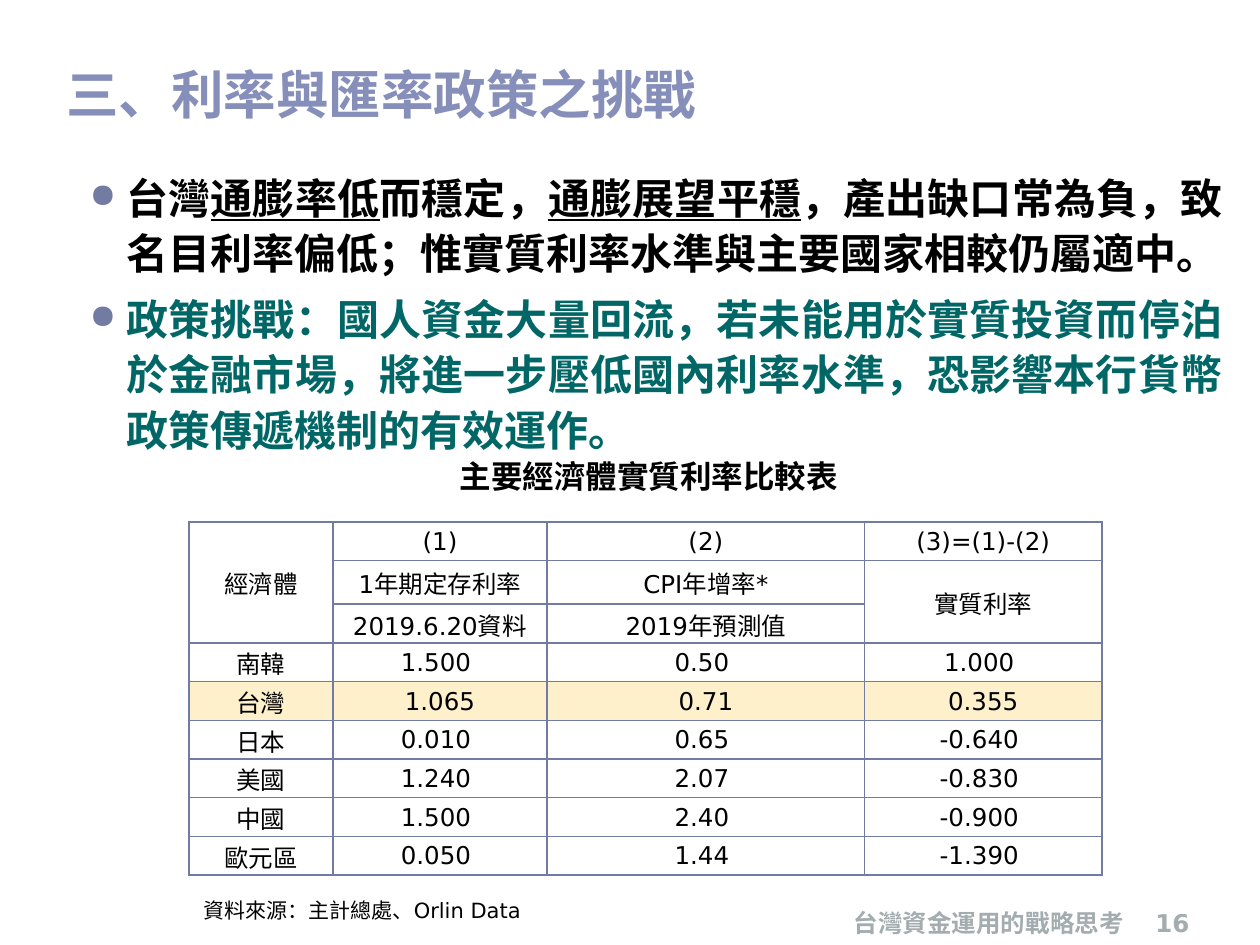
from dataclasses import dataclass

import lxml.etree
import pptx
import pptx.dml.color
import pptx.enum.text
import pptx.oxml
import pptx.oxml.ns
import pptx.util

Cm, Pt = pptx.util.Cm, pptx.util.Pt
RGB = pptx.dml.color.RGBColor
Align = pptx.enum.text.PP_ALIGN
Anchor = pptx.enum.text.MSO_ANCHOR
qn = pptx.oxml.ns.qn


@dataclass(frozen=True)
class Theme:
    face: str = "DejaVu Sans"
    title: str = "858FBA"
    ink: str = "000000"
    teal: str = "006666"
    rule: str = "727CA3"
    foot: str = "A3ACAF"
    glow: str = "FDF0CA"
    head_pt: int = 30
    body_pt: int = 24
    name_pt: int = 18
    cell_pt: int = 14
    note_pt: int = 12


THEME = Theme()


@dataclass(frozen=True)
class Label:
    """One line of text in a box measured in centimetres."""
    text: str
    box: tuple[float, float, float, float]
    size: int
    color: str
    bold: bool = True
    align: Align = Align.LEFT
    anchor: Anchor = Anchor.TOP


@dataclass(frozen=True)
class Point:
    """A bullet made of (text, underlined) spans."""
    spans: tuple[tuple[str, bool], ...]
    color: str


LABELS = (
    Label("三、利率與匯率政策之挑戰", (1.09, 1.12, 23.8, 2.92), THEME.head_pt, THEME.title),
    Label("台灣資金運用的戰略思考", (15.49, 18.01, 8.89, 1.02), THEME.cell_pt, THEME.foot,
          align=Align.CENTER, anchor=Anchor.BOTTOM),
    Label("16", (22.71, 18.01, 1.52, 1.02), THEME.cell_pt, THEME.foot,
          align=Align.RIGHT, anchor=Anchor.BOTTOM),
    Label("主要經濟體實質利率比較表", (3.86, 9.09, 18.44, 1.02), THEME.name_pt, THEME.ink,
          align=Align.CENTER),
    Label("資料來源：主計總處、Orlin Data", (3.86, 17.96, 7.39, 0.76), THEME.note_pt,
          THEME.ink, bold=False),
)

POINTS = (
    Point((("台灣", False), ("通膨率低", True), ("而穩定，", False), ("通膨展望平穩", True),
           ("，產出缺口常為負，致名目利率偏低；惟實質利率水準與主要國家相較仍屬適中。", False)),
          THEME.ink),
    Point((("政策挑戰：國人資金大量回流，若未能用於實質投資而停泊於金融市場，"
            "將進一步壓低國內利率水準，恐影響本行貨幣政策傳遞機制的有效運作。", False),),
          THEME.teal),
)

ROWS = (
    ("經濟體", "(1)", "(2)", "(3)=(1)-(2)"),
    ("", "1年期定存利率", "CPI年增率*", "實質利率"),
    ("", "2019.6.20資料", "2019年預測值", ""),
    ("南韓", "1.500", "0.50", "1.000"),
    ("台灣", "1.065", "0.71", "0.355"),
    ("日本", "0.010", "0.65", "-0.640"),
    ("美國", "1.240", "2.07", "-0.830"),
    ("中國", "1.500", "2.40", "-0.900"),
    ("歐元區", "0.050", "1.44", "-1.390"),
)
HEADS = 3
HOME = "台灣"
WIDTHS = (2.9, 4.32, 6.4, 4.78)
HEIGHTS = (0.78, 0.88) + (0.78,) * 7
MERGES = (((0, 0), (2, 0)), ((1, 3), (2, 3)))


def style(para, size: int, color: str, bold: bool) -> None:
    font = para.font
    font.name, font.size, font.bold = THEME.face, Pt(size), bold
    font.color.rgb = RGB.from_string(color)


def add_frame(slide, box: tuple[float, float, float, float]):
    frame = slide.shapes.add_textbox(*map(Cm, box)).text_frame
    frame.word_wrap = True
    return frame


def add_label(slide, label: Label) -> None:
    frame = add_frame(slide, label.box)
    frame.vertical_anchor = label.anchor
    para = frame.paragraphs[0]
    para.text, para.alignment = label.text, label.align
    style(para, label.size, label.color, label.bold)


def add_dot(para) -> None:
    """Give the paragraph a hanging round bullet."""
    props = para._p.get_or_add_pPr()
    props.set("marL", str(Cm(0.74)))
    props.set("indent", str(Cm(-0.74)))
    tint = lxml.etree.SubElement(props, qn("a:buClr"))
    lxml.etree.SubElement(tint, qn("a:srgbClr"), val=THEME.rule)
    lxml.etree.SubElement(props, qn("a:buSzPct"), val="80000")
    lxml.etree.SubElement(props, qn("a:buChar"), char="●")


def add_points(slide, points: tuple[Point, ...]) -> None:
    frame = add_frame(slide, (1.3, 3.12, 23.6, 14.4))
    frame.margin_left, frame.margin_top = Cm(0.51), Cm(0.25)
    for i, point in enumerate(points):
        para = frame.add_paragraph() if i else frame.paragraphs[0]
        para.alignment = Align.JUSTIFY
        para.line_spacing, para.space_after = 1.1, Pt(6)
        add_dot(para)
        style(para, THEME.body_pt, point.color, True)
        for text, lined in point.spans:
            run = para.add_run()
            run.text = text
            if lined:
                run.font.underline = True


def add_edges(cell) -> None:
    props = cell._tc.get_or_add_tcPr()
    for side in "LRTB":
        line = lxml.etree.SubElement(props, qn(f"a:ln{side}"), w=str(Pt(1)))
        fill = lxml.etree.SubElement(line, qn("a:solidFill"))
        lxml.etree.SubElement(fill, qn("a:srgbClr"), val=THEME.rule)


def fill_cell(cell, text: str, glow: bool, shift: bool) -> None:
    """Write one cell; shift nudges its text a little to the left."""
    cell.margin_left = cell.margin_top = Cm(0.03)
    cell.margin_right = Cm(0.19 if shift else 0.03)
    cell.margin_bottom = 0
    cell.vertical_anchor = Anchor.MIDDLE
    add_edges(cell)
    if glow:
        cell.fill.solid()
        cell.fill.fore_color.rgb = RGB.from_string(THEME.glow)
    else:
        cell.fill.background()
    para = cell.text_frame.paragraphs[0]
    para.text, para.alignment = text, Align.CENTER
    style(para, THEME.cell_pt, THEME.ink, False)


def add_rates(slide) -> None:
    table = slide.shapes.add_table(
        len(ROWS), len(WIDTHS), Cm(3.81), Cm(10.52),
        Cm(sum(WIDTHS)), Cm(sum(HEIGHTS))).table
    table.first_row = table.horz_banding = False
    for col, width in zip(table.columns, WIDTHS):
        col.width = Cm(width)
    for row, height in zip(table.rows, HEIGHTS):
        row.height = Cm(height)
    for r, row in enumerate(ROWS):
        glow = row[0] == HOME
        for c, text in enumerate(row):
            fill_cell(table.cell(r, c), text, glow, r >= HEADS and c > 0 and not glow)
    for start, end in MERGES:
        table.cell(*start).merge(table.cell(*end))


def main() -> None:
    deck = pptx.Presentation()
    deck.slide_width, deck.slide_height = Cm(25.4), Cm(19.05)
    slide = deck.slides.add_slide(deck.slide_layouts[6])
    add_points(slide, POINTS)
    for label in LABELS:
        add_label(slide, label)
    add_rates(slide)
    deck.save("out.pptx")


if __name__ == "__main__":
    main()
